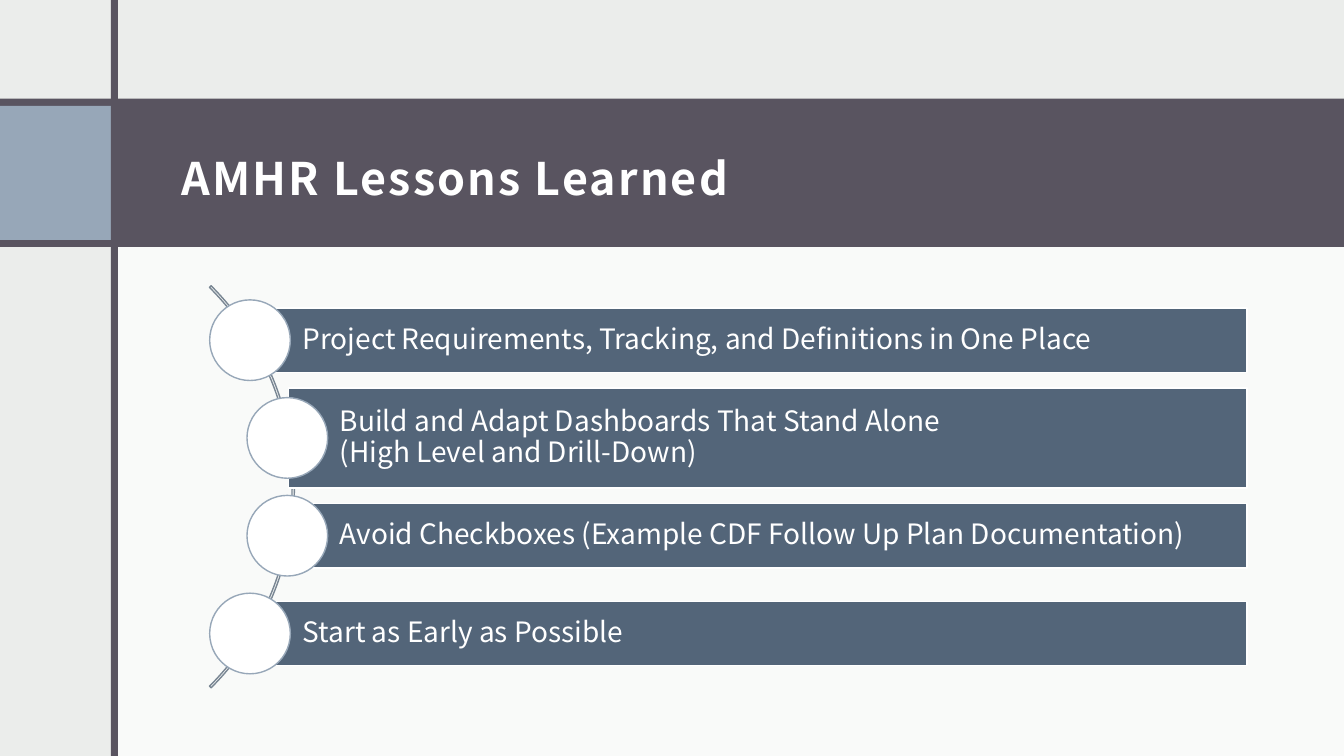
from lxml.etree import SubElement
from pptx import Presentation
from pptx.dml.color import RGBColor
from pptx.enum.shapes import MSO_SHAPE as Shape
from pptx.enum.text import MSO_ANCHOR as Anchor, PP_ALIGN as Align
from pptx.oxml.ns import qn
from pptx.util import Inches, Pt

FONT = "Noto Sans CJK JP"
WIDTH, HEIGHT = 13.33, 7.5
WHITE, PLUM, MIST, STEEL, SLATE = "FFFFFF", "595460", "EBEDEB", "97A7B8", "536579"
LESSONS = [
    ("Project Requirements, Tracking, and Definitions in One Place", 0, 0.64),
    ("Build and Adapt Dashboards That Stand Alone\v(High Level and Drill-Down)", 0.37, 0.99),
    ("Avoid Checkboxes (Example CDF Follow Up Plan Documentation)", 0.37, 0.64),
    ("Start as Early as Possible", 0, 0.64),
]


def color(value):
    """Turn a hex string into a colour."""
    return RGBColor.from_string(value)


def add_box(page, kind, box, fill=None, line=None, alpha=None):
    """Add a preset shape in a box of left, top, width and height."""
    shape = page.shapes.add_shape(kind, *map(Inches, box))
    shape.shadow.inherit = False
    if fill:
        shape.fill.solid()
        shape.fill.fore_color.rgb = color(fill)
    else:
        shape.fill.background()
    if alpha:
        tint = shape.fill._xPr.find(f".//{qn('a:srgbClr')}")
        SubElement(tint, qn("a:alpha"), val=str(alpha * 1000))
    if line:
        shape.line.color.rgb = color(line)
        shape.line.width = Pt(1)
    else:
        shape.line.fill.background()
    return shape


def write(shape, text, size, insets, bold=False, spacing=None, tracking=None):
    """Write one left-aligned, vertically centred paragraph into a shape."""
    frame = shape.text_frame
    frame.word_wrap = True
    frame.vertical_anchor = Anchor.MIDDLE
    (frame.margin_left, frame.margin_top,
     frame.margin_right, frame.margin_bottom) = map(Inches, insets)
    para = frame.paragraphs[0]
    para.text = text
    para.alignment = Align.LEFT
    para.line_spacing = spacing
    for span in para.runs:
        span.font.name = FONT
        span.font.size = Pt(size)
        span.font.bold = bold
        span.font.color.rgb = color(WHITE)
        if tracking:
            span.font._element.set("spc", str(int(tracking * 100)))


def add_backdrop(page, box):
    """Colour the page and lay the pale content panel."""
    left, top, width, height = box
    page.background.fill.solid()
    page.background.fill.fore_color.rgb = color(MIST)
    panel = (left + 1.14, top + 2.33, width - 1.14, height - 2.33)
    add_box(page, Shape.RECTANGLE, panel, WHITE, alpha=75)


def add_title_band(page, box, title):
    """Draw the title band with its accent block and title."""
    left, top, width, height = box
    edge = 0.07
    add_box(page, Shape.RECTANGLE, box, PLUM)
    add_box(page, Shape.RECTANGLE, (left, top + edge, 1.1, height - 2 * edge), STEEL)
    heading = page.shapes.add_textbox(
        *map(Inches, (left + 1.68, top + edge, width - 2.38, height - 2 * edge)))
    write(heading, title, 32, (0.12, 0.2, 0.12, 0.1), bold=True, tracking=1.5)


def add_lessons(page, box, lessons):
    """Draw the lessons as bars with circles strung along an arc."""
    left, top, width, height = box
    middle = top + height / 2
    diameter, pitch, arc_size = 0.8, 0.97, 5.64
    arc = add_box(page, Shape.BLOCK_ARC,
                  (left - 4.8, middle - arc_size / 2, arc_size, arc_size), line="798693")
    for index, value in enumerate((189, 27, 0.004)):
        arc.adjustments[index] = value
    for index, (text, indent, bar_height) in enumerate(lessons):
        center = middle + (index - (len(lessons) - 1) / 2) * pitch
        start = indent + diameter / 2 + 0.01
        bar = add_box(page, Shape.RECTANGLE,
                      (left + start, center - bar_height / 2, width - start, bar_height),
                      SLATE, WHITE)
        write(bar, text, 20, (0.51, 0.06, 0.06, 0.06), spacing=0.9)
        add_box(page, Shape.OVAL,
                (left + indent, center - diameter / 2, diameter, diameter), WHITE, STEEL)


def main():
    """Build the slide and save the deck."""
    deck = Presentation()
    deck.slide_width, deck.slide_height = Inches(WIDTH), Inches(HEIGHT)
    page = deck.slides.add_slide(deck.slide_layouts[6])
    add_backdrop(page, (0, 0, WIDTH, HEIGHT))
    add_title_band(page, (0, 0.98, WIDTH, 1.47), "AMHR Lessons Learned")
    add_box(page, Shape.RECTANGLE, (1.1, 0, 0.07, HEIGHT), PLUM)
    add_lessons(page, (2.08, 2.83, 10.29, 4), LESSONS)
    deck.save("out.pptx")


if __name__ == "__main__":
    main()
